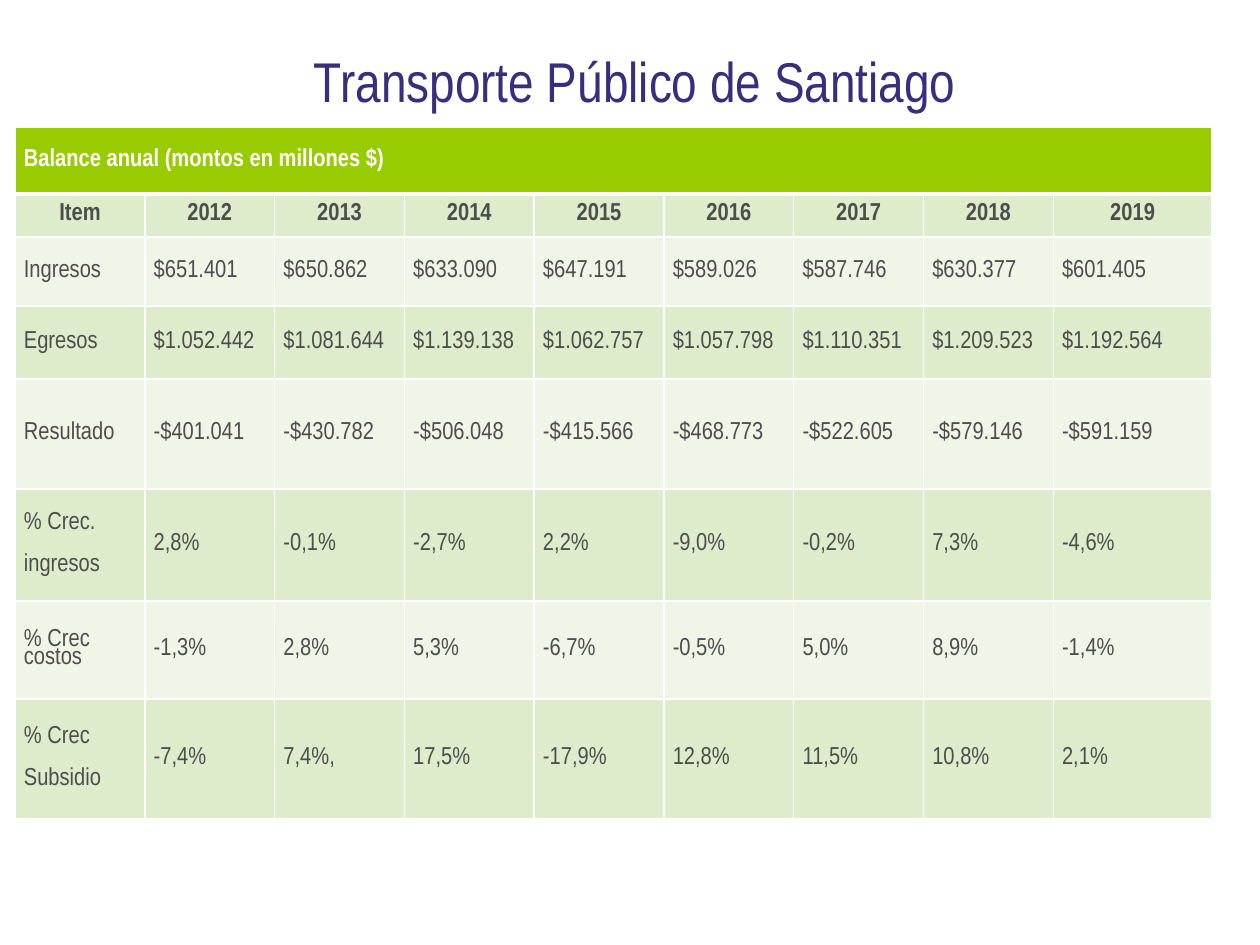
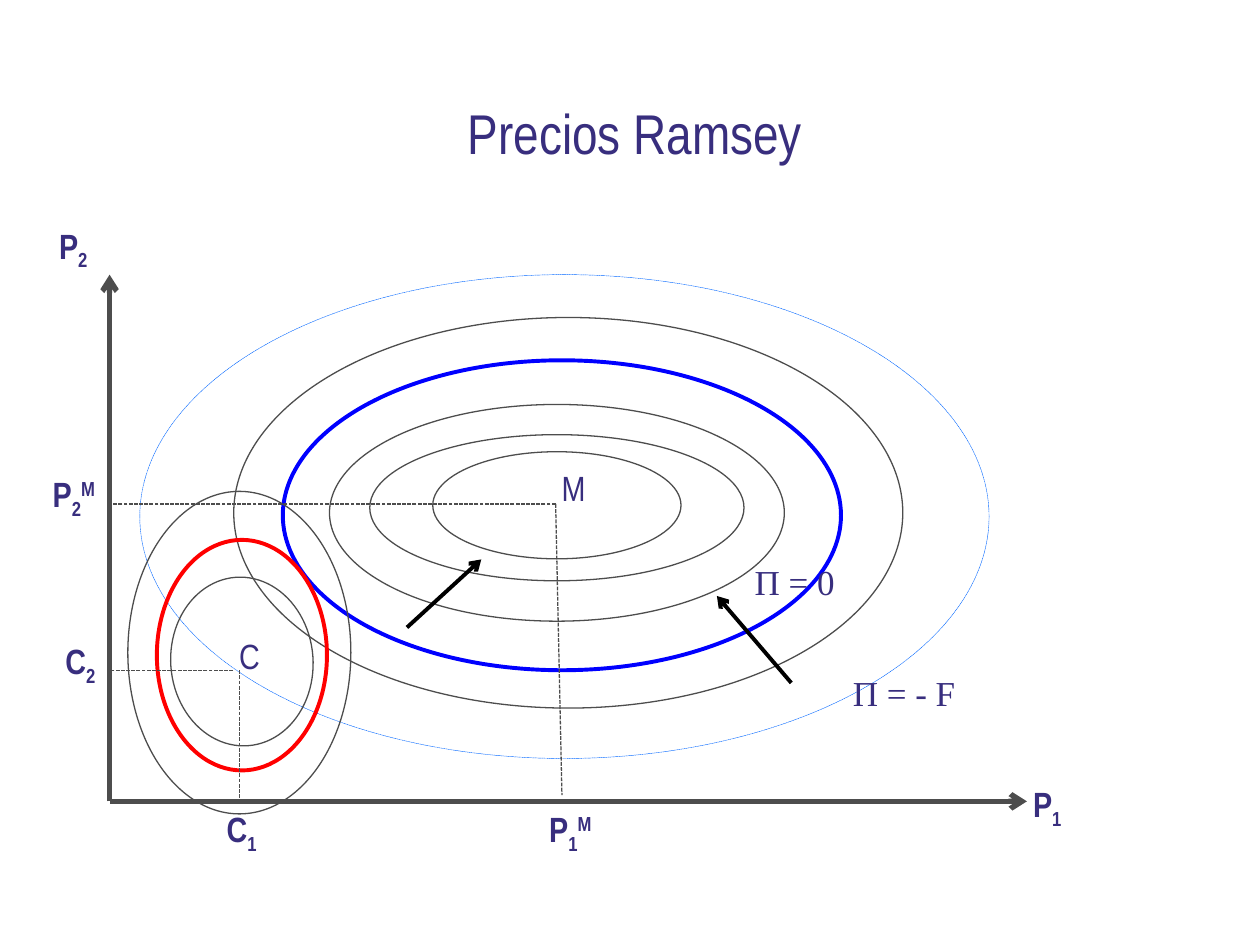
"""Build two slides: Santiago public transport balance and Ramsey prices."""
import pptx
import pptx.dml.color
import pptx.enum.dml
import pptx.enum.shapes
import pptx.enum.text
import pptx.oxml.ns
import pptx.util
from lxml import etree

RGBColor = pptx.dml.color.RGBColor
Pt = pptx.util.Pt
ALIGN = pptx.enum.text.PP_ALIGN
MIDDLE = pptx.enum.text.MSO_ANCHOR.MIDDLE
DASH = pptx.enum.dml.MSO_LINE.SQUARE_DOT
qn = pptx.oxml.ns.qn

INDIGO = RGBColor(0x38, 0x2E, 0x7E)
GRAY = RGBColor(0x4D, 0x4D, 0x4D)
WHITE = RGBColor(0xFF, 0xFF, 0xFF)
BLACK = RGBColor(0, 0, 0)
LIME = RGBColor(0x99, 0xCC, 0x00)
GREEN_BAND = RGBColor(0xDE, 0xEC, 0xCC)
PALE_BAND = RGBColor(0xEF, 0xF6, 0xE7)
BLUE = RGBColor(0, 0, 0xFF)
SKY = RGBColor(0, 0x66, 0xFF)
RED = RGBColor(0xFF, 0, 0)
SANS, SERIF = "Arial Narrow", "Times New Roman"

GRID_COLUMNS, GRID_ROWS = 10, 7.5
UNIT = pptx.util.Inches(1)

BALANCE_TITLE = "Transporte Público de Santiago"
BALANCE_HEADING = "Balance anual (montos en millones $)"
BALANCE = [
    ["Item", "2012", "2013", "2014", "2015", "2016", "2017", "2018", "2019"],
    ["Ingresos", "$651.401", "$650.862", "$633.090", "$647.191", "$589.026",
     "$587.746", "$630.377", "$601.405"],
    ["Egresos", "$1.052.442", "$1.081.644", "$1.139.138", "$1.062.757",
     "$1.057.798", "$1.110.351", "$1.209.523", "$1.192.564"],
    ["Resultado", "-$401.041", "-$430.782", "-$506.048", "-$415.566",
     "-$468.773", "-$522.605", "-$579.146", "-$591.159"],
    ["% Crec.\ningresos", "2,8%", "-0,1%", "-2,7%", "2,2%", "-9,0%", "-0,2%",
     "7,3%", "-4,6%"],
    ["% Crec\vcostos", "-1,3%", "2,8%", "5,3%", "-6,7%", "-0,5%", "5,0%",
     "8,9%", "-1,4%"],
    ["% Crec\nSubsidio", "-7,4%", "7,4%,", "17,5%", "-17,9%", "12,8%", "11,5%",
     "10,8%", "2,1%"],
]
COLUMN_WIDTHS = [1.03] * 8 + [1.26]
ROW_HEIGHTS = [0.53, 0.34, 0.55, 0.58, 0.87, 0.89, 0.78, 0.95]

RAMSEY_TITLE = "Precios Ramsey"
ORIGIN_X, ORIGIN_Y = 0.87, 6.36
MONOPOLY_X, MONOPOLY_Y = 4.41, 4
COST_X, COST_Y = 1.9, 5.32

# center x, center y, width, height, rotation, colour, line width, dash
CURVES = [
    (4.42, 4.01, 1.97, 0.85, 0, GRAY, 0.75, None),
    (4.42, 4.03, 2.97, 1.16, 0, GRAY, 0.75, None),
    (4.42, 4.07, 3.61, 1.72, 0, GRAY, 0.75, None),
    (4.46, 4.09, 4.43, 2.46, 0, BLUE, 2.25, None),
    (4.51, 4.07, 5.31, 3.1, 0, GRAY, 0.75, None),
    (4.48, 4.1, 6.74, 3.84, 0, SKY, 0.25, DASH),
    (1.92, 5.25, 1.34, 1.13, 265.8, GRAY, 0.75, None),
    (1.92, 5.2, 1.35, 1.83, 0, RED, 2.25, None),
    (1.9, 5.18, 1.77, 2.56, 0, GRAY, 0.75, None),
]
AXES = [(8.15, ORIGIN_Y), (ORIGIN_X, 2.18)]
GUIDES = [
    (MONOPOLY_X, MONOPOLY_Y, 4.46, 6.31),
    (MONOPOLY_X, MONOPOLY_Y, ORIGIN_X, MONOPOLY_Y),
    (COST_X, COST_Y, COST_X, ORIGIN_Y),
    (1.85, COST_Y, ORIGIN_X, COST_Y),
]
POINTERS = [(3.23, 4.98, 3.82, 4.44), (6.28, 5.42, 5.69, 4.73)]
LABEL_HEIGHT = 0.44
LABELS = [
    (8.1, 6.16, 0.59, SANS, True, ["P", "1"]),
    (0.37, 1.73, 0.59, SANS, True, ["P", "2"]),
    (4.26, 6.36, 0.79, SANS, True, ["P", "1", "M"]),
    (0.32, 3.7, 0.79, SANS, True, ["P", "2", "M"]),
    (1.7, 6.36, 0.79, SANS, True, ["C", "1"]),
    (0.42, 5.03, 0.79, SANS, True, ["C", "2"]),
    (4.36, 3.65, 0.44, SANS, False, ["M"]),
    (1.8, 4.99, 0.44, SANS, False, ["C"]),
    (6.67, 5.28, 1.18, SERIF, False, ["Π = - F"]),
    (5.89, 4.4, 1.18, SERIF, False, ["Π = 0"]),
]
BASELINES = [0, -25000, 30000]


def units(*lengths):
    return [round(length * UNIT) for length in lengths]


def style(para, size, color, name=SANS, bold=False):
    font = para.font
    font.size, font.name, font.bold = Pt(size), name, bold
    font.color.rgb = color


def add_text(page, place, parts, size=20, name=SANS, bold=False):
    box = page.shapes.add_textbox(*units(*place))
    box.text_frame.word_wrap = True
    para = box.text_frame.paragraphs[0]
    for part, baseline in zip(parts, BASELINES):
        span = para.add_run()
        span.text = part
        if baseline:
            span._r.get_or_add_rPr().set("baseline", str(baseline))
    style(para, size, INDIGO, name, bold)
    return box


def add_page(deck, title, top):
    page = deck.slides.add_slide(deck.slide_layouts[6])
    box = add_text(page, (0.83, top, 8.42, 0.75), [title], 32)
    box.text_frame.vertical_anchor = MIDDLE
    box.text_frame.paragraphs[0].alignment = ALIGN.CENTER
    return page


def add_borders(cell, **widths):
    properties = cell._tc.get_or_add_tcPr()
    for index, side in enumerate("LRTB"):
        line = etree.Element(qn(f"a:ln{side}"), w=str(Pt(widths.get(side, 1))))
        fill = etree.SubElement(line, qn("a:solidFill"))
        etree.SubElement(fill, qn("a:srgbClr"), val=str(WHITE))
        properties.insert(index, line)


def fill_cell(cell, text, fill, color, bold, centered):
    cell.fill.solid()
    cell.fill.fore_color.rgb = fill
    cell.vertical_anchor = MIDDLE
    cell.margin_left, cell.margin_right = units(0.07, 0.07)
    cell.margin_top, cell.margin_bottom = units(0.02, 0.02)
    cell.text_frame.text = text
    for index, para in enumerate(cell.text_frame.paragraphs):
        para.line_spacing = 0.8
        if index:
            para.space_before = Pt(13)
        if centered:
            para.alignment = ALIGN.CENTER
        style(para, 14, color, bold=bold)


def add_balance(page):
    place = units(0.12, 1.01, sum(COLUMN_WIDTHS), sum(ROW_HEIGHTS))
    frame = page.shapes.add_table(len(ROW_HEIGHTS), len(COLUMN_WIDTHS), *place)
    table = frame.table
    table.first_row = table.horz_banding = False
    for column, width in zip(table.columns, units(*COLUMN_WIDTHS)):
        column.width = width
    for row, height in zip(table.rows, units(*ROW_HEIGHTS)):
        row.height = height
    heading = [BALANCE_HEADING] + [""] * (len(COLUMN_WIDTHS) - 1)
    for row, texts in enumerate([heading] + BALANCE):
        for column, text in enumerate(texts):
            cell = table.cell(row, column)
            if row == 0:
                fill_cell(cell, text, LIME, WHITE, True, False)
                add_borders(cell, B=3)
            else:
                band = GREEN_BAND if row % 2 else PALE_BAND
                fill_cell(cell, text, band, GRAY, row == 1, row == 1)
                add_borders(cell, T=3 if row == 1 else 1)
    table.cell(0, 0).merge(table.cell(0, len(COLUMN_WIDTHS) - 1))


def add_line(page, ends, color, width, dash=None, arrow=False):
    kind = pptx.enum.shapes.MSO_CONNECTOR.STRAIGHT
    connector = page.shapes.add_connector(kind, *units(*ends))
    connector.line.color.rgb = color
    connector.line.width = Pt(width)
    if dash:
        connector.line.dash_style = dash
    if arrow:
        etree.SubElement(connector.line._get_or_add_ln(), qn("a:tailEnd"), type="arrow")
    etree.SubElement(connector._element.spPr, qn("a:effectLst"))


def add_curve(page, center_x, center_y, width, height, rotation, color, weight, dash):
    place = units(center_x - width / 2, center_y - height / 2, width, height)
    curve = page.shapes.add_shape(pptx.enum.shapes.MSO_SHAPE.OVAL, *place)
    curve.shadow.inherit = False
    curve.rotation = rotation
    curve.fill.background()
    curve.line.color.rgb = color
    curve.line.width = Pt(weight)
    if dash:
        curve.line.dash_style = dash


def add_ramsey(page):
    for end in AXES:
        add_line(page, (ORIGIN_X, ORIGIN_Y, *end), GRAY, 3, arrow=True)
    for curve in CURVES:
        add_curve(page, *curve)
    for guide in GUIDES:
        add_line(page, guide, GRAY, 0.75, dash=DASH)
    for pointer in POINTERS:
        add_line(page, pointer, BLACK, 2.25, arrow=True)
    for left, top, width, name, bold, parts in LABELS:
        add_text(page, (left, top, width, LABEL_HEIGHT), parts, 20, name, bold)


def main():
    deck = pptx.Presentation()
    deck.slide_width, deck.slide_height = units(GRID_COLUMNS, GRID_ROWS)
    add_balance(add_page(deck, BALANCE_TITLE, 0.26))
    add_ramsey(add_page(deck, RAMSEY_TITLE, 0.67))
    deck.save("out.pptx")


if __name__ == "__main__":
    main()
